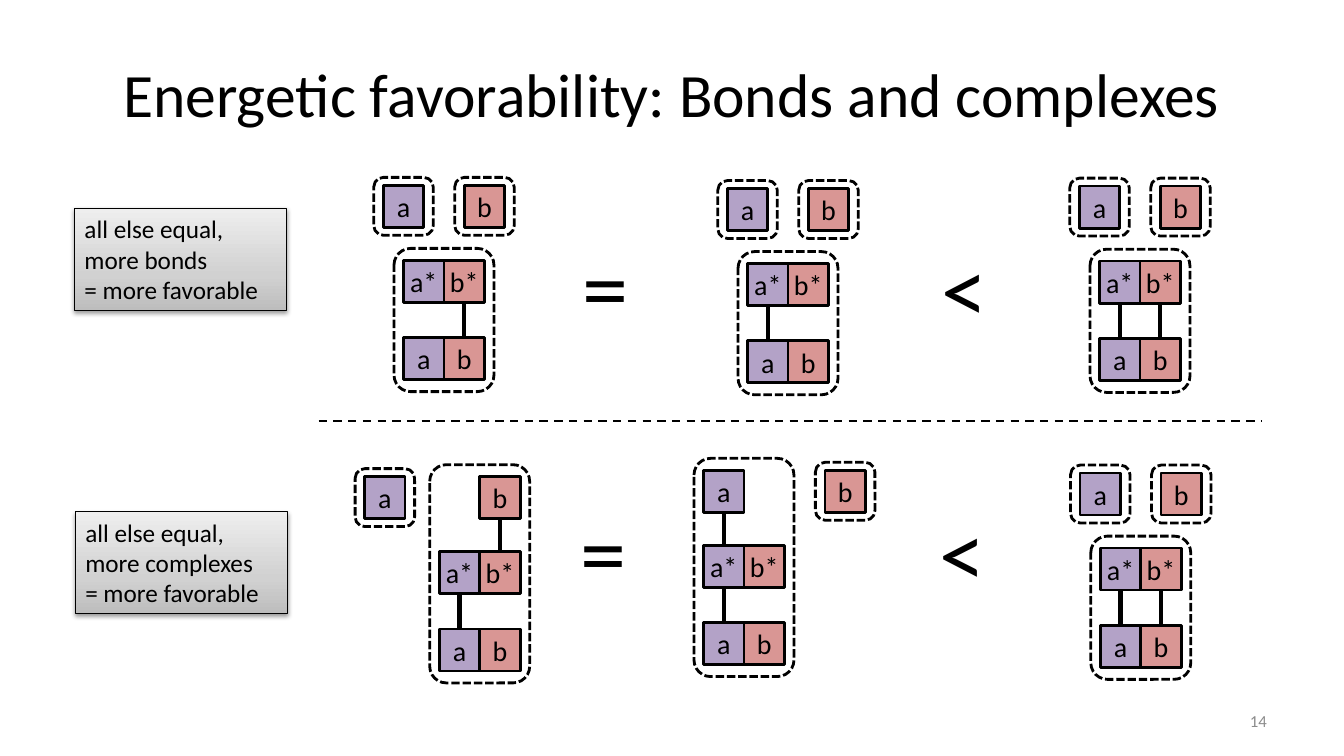
from dataclasses import dataclass

from lxml import etree
from pptx import Presentation
from pptx.dml.color import RGBColor
from pptx.enum.dml import MSO_LINE
from pptx.enum.shapes import MSO_CONNECTOR, MSO_SHAPE
from pptx.enum.text import MSO_ANCHOR, PP_ALIGN
from pptx.oxml import parse_xml
from pptx.oxml.ns import nsdecls, qn
from pptx.util import Cm, Pt

RECT, ROUNDED = MSO_SHAPE.RECTANGLE, MSO_SHAPE.ROUNDED_RECTANGLE
STRAIGHT = MSO_CONNECTOR.STRAIGHT
DASH, SHORT_DASH = MSO_LINE.DASH, MSO_LINE.SQUARE_DOT
LEFT, CENTER, RIGHT = PP_ALIGN.LEFT, PP_ALIGN.CENTER, PP_ALIGN.RIGHT
TOP, MIDDLE = MSO_ANCHOR.TOP, MSO_ANCHOR.MIDDLE

FONT = "Calibri"
COLORS = {
    "black": "000000", "number": "8C8C8C", "a": "B3A2C7", "b": "D99694",
    "note_bottom": "BDBDBD", "note_mid": "D1D1D1", "note_top": "EEEEEE",
}

# Sizes in cm
CELL_W, CELL_H = 1.02, 1.06
ROW_GAP = 1.95         # from the starred row to the bottom row
UPPER = -1.89          # from the starred row to the strands above it
PAD_X, PAD_Y = 0.24, 0.3
FREE_PAD_Y = 0.2


@dataclass(frozen=True)
class State:
    """Strands around a starred pair at x, y; offsets are in cm."""
    x: float
    y: float
    bonds: str                # domains bonded to the bottom row
    free: dict[str, float]    # unbound strand -> horizontal offset
    docked: str = ""          # strand bonded from above


@dataclass(frozen=True)
class Label:
    text: str
    x: float
    y: float


APART = {"a": -0.51, "b": 1.53}
STATES = [
    State(10.17, 6.56, "b", APART),
    State(18.84, 6.64, "a", APART),
    State(27.71, 6.58, "ab", APART),
    State(11.07, 13.9, "a", {"a": -1.88}, docked="b"),
    State(17.73, 13.74, "a", {"b": 3.06}, docked="a"),
    State(27.73, 13.81, "ab", APART),
]
SIGNS = [
    Label("=", 14.43, 5.66), Label("<", 23.48, 5.69),
    Label("=", 14.37, 12.32), Label("<", 23.42, 12.36),
]
NOTES = [
    Label("all else equal,\nmore bonds\n= more favorable", 1.88, 5.26),
    Label("all else equal,\nmore complexes\n= more favorable", 1.9, 12.9),
]


def rgb(name: str) -> RGBColor:
    return RGBColor.from_string(COLORS[name])


def write(sp, text: str, *, size: float, color: str = "black", align=LEFT,
          anchor=TOP, inset: float | None = None) -> None:
    tf = sp.text_frame
    tf.word_wrap = True
    tf.vertical_anchor = anchor
    if inset is not None:
        tf.margin_left = tf.margin_right = Cm(inset)
        tf.margin_top = tf.margin_bottom = Cm(inset)
    for i, line in enumerate(text.split("\n")):
        p = tf.paragraphs[0] if i == 0 else tf.add_paragraph()
        p.alignment = align
        r = p.add_run()
        r.text = line
        r.font.name, r.font.size = FONT, Pt(size)
        r.font.color.rgb = rgb(color)


def add_text(shapes, text: str, x: float, y: float, w: float, h: float, **fmt) -> None:
    write(shapes.add_textbox(Cm(x), Cm(y), Cm(w), Cm(h)), text, **fmt)


def add_box(shapes, kind, x: float, y: float, w: float, h: float, width: float = 2):
    sp = shapes.add_shape(kind, Cm(x), Cm(y), Cm(w), Cm(h))
    sp.shadow.inherit = False
    sp.line.color.rgb = rgb("black")
    sp.line.width = Pt(width)
    return sp


def add_line(shapes, x1: float, y1: float, x2: float, y2: float,
             width: float = 3, dash=None) -> None:
    ln = shapes.add_connector(STRAIGHT, Cm(x1), Cm(y1), Cm(x2), Cm(y2))
    ln.line.color.rgb = rgb("black")
    ln.line.width = Pt(width)
    if dash is not None:
        ln.line.dash_style = dash
    etree.SubElement(ln._element.spPr, qn("a:effectLst"))


def add_cell(shapes, text: str, x: float, y: float) -> None:
    sp = add_box(shapes, RECT, x, y, CELL_W, CELL_H)
    sp.fill.solid()
    sp.fill.fore_color.rgb = rgb(text[0])
    write(sp, text, size=20, align=CENTER, anchor=MIDDLE, inset=0)


def add_outline(shapes, x: float, y: float, w: float, h: float) -> None:
    sp = add_box(shapes, ROUNDED, x, y, w, h)
    sp.fill.background()
    sp.line.dash_style = SHORT_DASH


def add_state(shapes, state: State) -> None:
    group = shapes.add_group_shape().shapes
    x, y = state.x, state.y
    column = {"a": x, "b": x + CELL_W}
    upper = y + UPPER

    # Starred pair above the bottom pair
    for domain, left in column.items():
        add_cell(group, domain + "*", left, y)
        add_cell(group, domain, left, y + ROW_GAP)
    for domain in state.bonds:
        mid = column[domain] + CELL_W / 2
        add_line(group, mid, y + CELL_H, mid, y + ROW_GAP)

    # Strand bonded from above
    if state.docked:
        left = column[state.docked]
        mid = left + CELL_W / 2
        add_cell(group, state.docked, left, upper)
        add_line(group, mid, upper + CELL_H, mid, y)

    # Dashed outlines: one for each complex
    for domain, dx in state.free.items():
        add_cell(group, domain, x + dx, upper)
        add_outline(group, x + dx - PAD_X, upper - FREE_PAD_Y,
                    CELL_W + 2 * PAD_X, CELL_H + 2 * FREE_PAD_Y)
    top = (upper if state.docked else y) - PAD_Y
    bottom = y + ROW_GAP + CELL_H + PAD_Y
    add_outline(group, x - PAD_X, top, 2 * (CELL_W + PAD_X), bottom - top)


def add_note(shapes, note: Label) -> None:
    sp = add_box(shapes, RECT, note.x, note.y, 5.34, 2.57, width=0.75)
    stops = "".join(
        f'<a:gs pos="{pos * 1000}"><a:srgbClr val="{COLORS[name]}"/></a:gs>'
        for pos, name in ((0, "note_bottom"), (35, "note_mid"), (100, "note_top")))
    sp_pr = sp._element.spPr
    sp_pr.find(qn("a:prstGeom")).addnext(parse_xml(
        f'<a:gradFill {nsdecls("a")} rotWithShape="1"><a:gsLst>{stops}</a:gsLst>'
        '<a:lin ang="16200000" scaled="0"/></a:gradFill>'))
    sp_pr.find(qn("a:effectLst")).append(parse_xml(
        f'<a:outerShdw {nsdecls("a")} blurRad="40000" dist="20000" dir="5400000" '
        f'rotWithShape="0"><a:srgbClr val="{COLORS["black"]}">'
        '<a:alpha val="38000"/></a:srgbClr></a:outerShdw>'))
    write(sp, note.text, size=18)


def main() -> None:
    prs = Presentation()
    prs.slide_width, prs.slide_height = Cm(33.87), Cm(19.05)
    s = prs.slides.add_slide(prs.slide_layouts[6])
    shapes = s.shapes

    # Title and slide number
    add_text(shapes, "Energetic favorability: Bonds and complexes",
             1.69, 0.76, 30.48, 3.18, size=44, align=CENTER, anchor=MIDDLE)
    add_text(shapes, "14", 24.28, 17.66, 7.9, 1.01,
             size=12, color="number", align=RIGHT, anchor=MIDDLE)

    # Comparison signs and divider
    for sign in SIGNS:
        add_text(shapes, sign.text, sign.x, sign.y, 1.98, 3.07, size=66)
    add_line(shapes, 8.03, 10.62, 31.78, 10.62, width=1.5, dash=DASH)

    # Notes and strand diagrams
    for note in NOTES:
        add_note(shapes, note)
    for state in STATES:
        add_state(shapes, state)

    prs.save("out.pptx")


if __name__ == "__main__":
    main()
